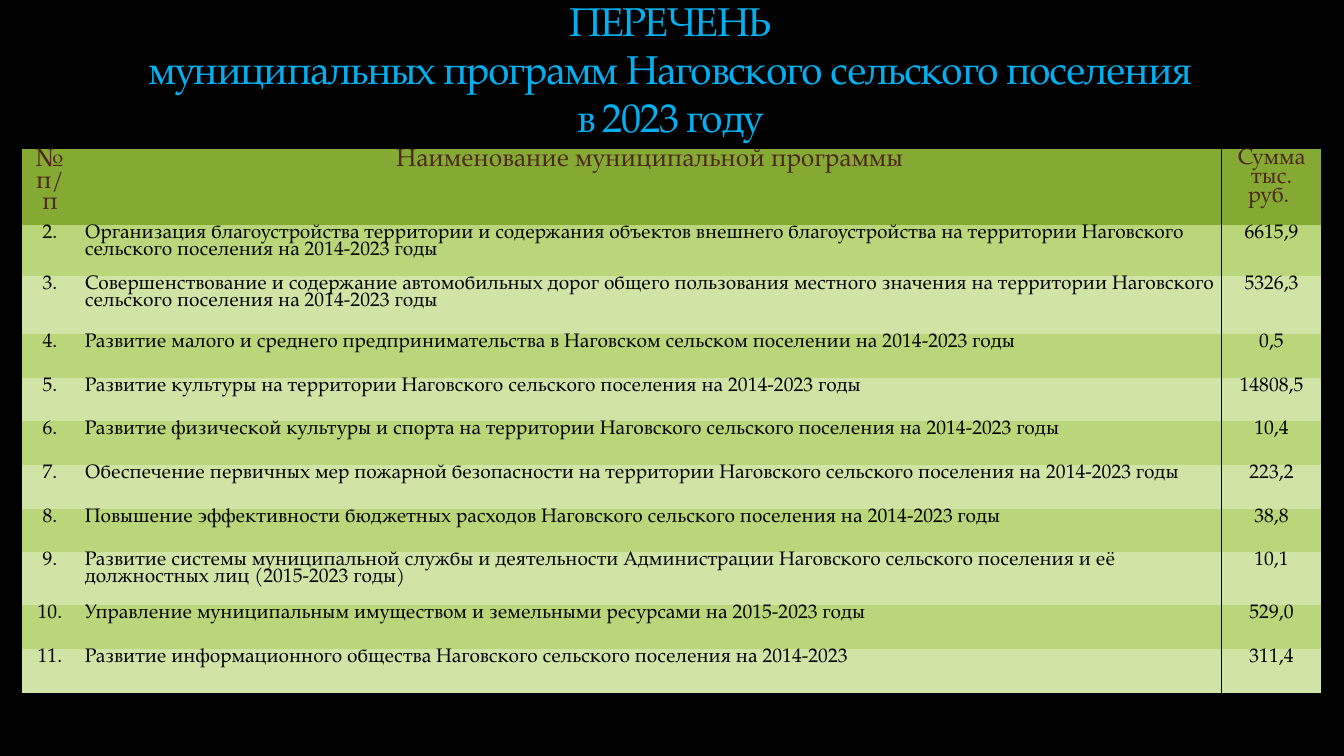
from lxml.etree import SubElement
from pptx import Presentation
from pptx.dml.color import RGBColor
from pptx.enum.text import MSO_ANCHOR as Anchor, PP_ALIGN as Align
from pptx.oxml import parse_xml
from pptx.oxml.ns import nsdecls, qn
from pptx.util import Cm, Pt

FONT = "TeX Gyre Pagella"
NO_STYLE = "{2D5ABB26-0587-4C30-8999-92F81FD0307C}"
HEADER_FILL, BAND_FILLS = "84AA33", ["B9D77A", "D0E4A6"]

HEADINGS = ["№ п/п", "Наименование муниципальной программы", "Сумма тыс. руб. "]
PROGRAMS = [
    ("Организация благоустройства территории и содержания объектов внешнего "
     "благоустройства на территории Наговского сельского поселения на 2014-2023 годы", "6615,9"),
    ("Совершенствование и содержание автомобильных дорог общего пользования местного "
     "значения на территории Наговского сельского поселения на 2014-2023 годы", "5326,3"),
    ("Развитие малого и среднего предпринимательства в Наговском сельском поселении "
     "на 2014-2023 годы", "0,5"),
    ("Развитие культуры на территории Наговского сельского поселения на 2014-2023 годы", "14808,5"),
    ("Развитие физической культуры и спорта на территории Наговского сельского поселения "
     "на 2014-2023 годы", "10,4"),
    ("Обеспечение первичных мер пожарной безопасности на территории Наговского сельского "
     "поселения на 2014-2023 годы", "223,2"),
    ("Повышение эффективности бюджетных расходов Наговского сельского поселения "
     "на 2014-2023 годы", "38,8"),
    ("Развитие системы муниципальной службы и деятельности Администрации Наговского "
     "сельского поселения и её должностных лиц (2015-2023 годы)", "10,1"),
    ("Управление муниципальным имуществом и земельными ресурсами на 2015-2023 годы", "529,0"),
    ("Развитие информационного общества Наговского сельского поселения на 2014-2023", "311,4"),
]
COLUMN_WIDTHS = [1.4, 28.83, 2.51]
ROW_HEIGHTS = [1.91, 1.28, 1.47] + [1.1] * 5 + [1.33] + [1.1] * 2


def color(hex_code):
    return RGBColor.from_string(hex_code)


def add_border(cell, side):
    """Draw a thin black line on the cell's side: "L" or "R"."""
    line = parse_xml(f'<a:ln{side} {nsdecls("a")} w="9525"/>')
    SubElement(SubElement(line, qn("a:solidFill")), qn("a:srgbClr"), val="000000")
    cell._tc.get_or_add_tcPr().insert(0, line)


deck = Presentation()
deck.slide_width, deck.slide_height = Cm(33.87), Cm(19.05)
slide = deck.slides.add_slide(deck.slide_layouts[6])
slide.background.fill.solid()
slide.background.fill.fore_color.rgb = color("000000")

# Programme table
frame = slide.shapes.add_table(len(ROW_HEIGHTS), len(COLUMN_WIDTHS), Cm(0.56), Cm(3.76),
                               Cm(sum(COLUMN_WIDTHS)), Cm(sum(ROW_HEIGHTS)))
programs = frame.table
programs.first_row = programs.horz_banding = False
programs._tbl.tblPr.find(qn("a:tableStyleId")).text = NO_STYLE
for column, width in zip(programs.columns, COLUMN_WIDTHS):
    column.width = Cm(width)
for row, height in zip(programs.rows, ROW_HEIGHTS):
    row.height = Cm(height)

entries = [(f"{number}.", name, amount) for number, (name, amount) in enumerate(PROGRAMS, 2)]
for r, entry in enumerate([HEADINGS] + entries):
    for c, content in enumerate(entry):
        is_header = r == 0
        cell = programs.cell(r, c)
        cell.margin_left = cell.margin_right = Cm(0.18)
        cell.margin_top = cell.margin_bottom = 0
        cell.fill.solid()
        cell.fill.fore_color.rgb = color(HEADER_FILL if is_header else BAND_FILLS[(r - 1) % 2])
        if c > 0:
            add_border(cell, "R")
        if c == 2:
            add_border(cell, "L")
        cell.text_frame.text = content
        paragraph = cell.text_frame.paragraphs[0]
        paragraph.alignment = Align.CENTER if is_header or c != 1 else Align.LEFT
        paragraph.line_spacing = 0.85
        font = paragraph.font
        font.name = FONT
        font.size = Pt((16 if c == 2 else 18) if is_header else 14)
        font.color.rgb = color("4F271C" if is_header else "000000")
        run_font = paragraph.runs[0].font
        run_font.name, run_font.size = font.name, font.size
        run_font.color.rgb = font.color.rgb

# Title
title = slide.shapes.add_textbox(Cm(2.29), Cm(0.99), Cm(29.21), Cm(2.69)).text_frame
title.word_wrap = True
title.vertical_anchor = Anchor.BOTTOM
title.text = "ПЕРЕЧЕНЬ\vмуниципальных программ Наговского сельского поселения\vв 2023 году"
heading = title.paragraphs[0]
heading.alignment = Align.CENTER
for run in heading.runs:
    run.font.name = FONT
    run.font.size = Pt(28.8)
    run.font.color.rgb = color("00B0F0")
    run.font._element.set("spc", "-100")

deck.save("out.pptx")
